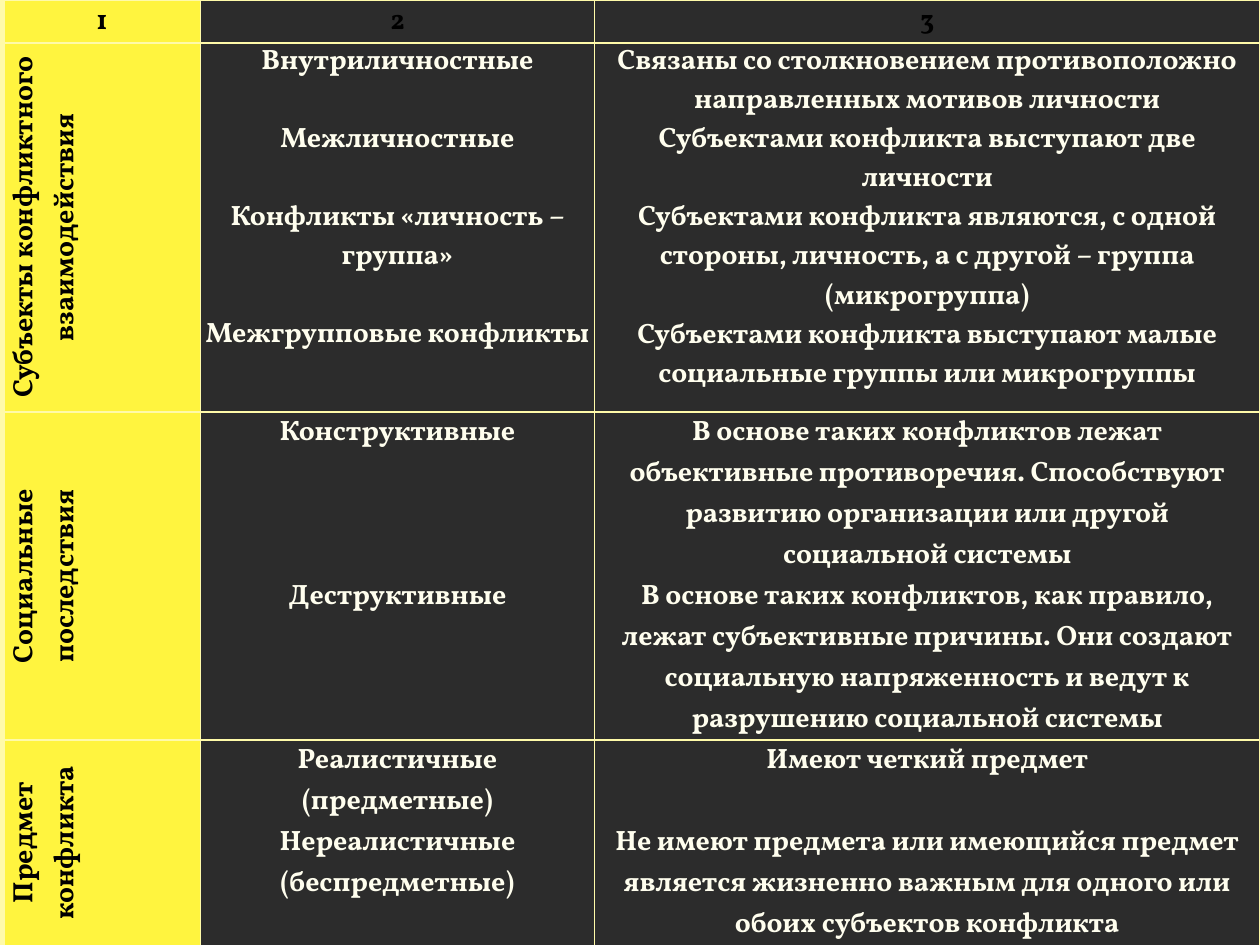
from lxml.etree import SubElement
from pptx import Presentation
from pptx.dml.color import RGBColor
from pptx.enum.text import MSO_ANCHOR as Anchor, PP_ALIGN as Align
from pptx.oxml import parse_xml
from pptx.oxml.ns import nsdecls
from pptx.util import Inches, Pt

FONT = "Vollkorn"
BLACK, CREAM, PALE, YELLOW, DARK = "000000", "FFFEEE", "FFFAA9", "FFF43F", "2C2C2C"
COLUMNS = [1.56, 3.13, 5.28]
HEADINGS = ["1", "2", "3"]
LINE = 22.3
LOOSE_LINE = 23.4

GROUPS = [
    dict(
        height=2.93, inset=0.02, spacing=1.0,
        subject=["Субъекты конфликтного", "взаимодействия"],
        kinds=["Внутриличностные", "Межличностные", "Конфликты «личность – группа»",
               "Межгрупповые конфликты"],
        kind_gap=LINE,
        notes=["Связаны со столкновением противоположно направленных мотивов личности",
               "Субъектами конфликта выступают две личности",
               "Субъектами конфликта являются, с одной стороны, личность, "
               "а с другой – группа (микрогруппа)",
               "Субъектами конфликта выступают малые социальные группы или микрогруппы"],
        note_gap=0),
    dict(
        height=2.59, inset=0.06, spacing=1.05,
        subject=["Социальные", "последствия"],
        kinds=["Конструктивные", "Деструктивные"],
        kind_gap=3 * LOOSE_LINE,
        notes=["В основе таких конфликтов лежат объективные противоречия. "
               "Способствуют развитию организации или другой социальной системы",
               "В основе таких конфликтов, как правило, лежат субъективные причины. "
               "Они создают социальную напряженность и ведут к разрушению социальной системы"],
        note_gap=0),
    dict(
        height=1.59, inset=0.06, spacing=1.05,
        subject=["Предмет", "конфликта"],
        kinds=["Реалистичные (предметные)", "Нереалистичные (беспредметные)"],
        kind_gap=0,
        notes=["Имеют четкий предмет",
               "Не имеют предмета или имеющийся предмет является жизненно важным "
               "для одного или обоих субъектов конфликта"],
        note_gap=LOOSE_LINE),
]


def color(value):
    return RGBColor.from_string(value)


def write(frame, lines, ink=BLACK, spacing=1.05, gap=0):
    for index, line in enumerate(lines):
        para = frame.add_paragraph() if index else frame.paragraphs[0]
        para.alignment = Align.CENTER
        para.line_spacing = spacing
        para.space_before = Pt(gap if index else 0)
        span = para.add_run()
        span.text = line
        span.font.name = FONT
        span.font.size = Pt(16)
        span.font.bold = True
        span.font.color.rgb = color(ink)


def add_borders(cell):
    properties = cell._tc.get_or_add_tcPr()
    for index, side in enumerate(["lnL", "lnR", "lnT", "lnB"]):
        border = parse_xml(f'<a:{side} {nsdecls("a")} w="{Pt(1)}"><a:solidFill>'
                           f'<a:srgbClr val="{PALE}"/></a:solidFill></a:{side}>')
        properties.insert(index, border)


def fill_cell(cell, lines, fill=DARK, inset=0.02, middle=False, upward=False, **style):
    cell.margin_left = cell.margin_right = Inches(inset)
    cell.margin_top = cell.margin_bottom = 0
    cell.vertical_anchor = Anchor.MIDDLE if middle else Anchor.TOP
    cell.fill.solid()
    cell.fill.fore_color.rgb = color(fill)
    add_borders(cell)
    if upward:
        cell._tc.get_or_add_tcPr().set("vert", "vert270")
    write(cell.text_frame, lines, **style)


def add_conflict_table(page, left, top, width, height):
    heights = [0.34] + [group["height"] for group in GROUPS]
    table = page.shapes.add_table(len(heights), len(COLUMNS), left, top, width, height).table
    table.first_row = table.horz_banding = False
    for column, size in zip(table.columns, COLUMNS):
        column.width = Inches(size)
    for row, size in zip(table.rows, heights):
        row.height = Inches(size)
    for index, heading in enumerate(HEADINGS):
        fill_cell(table.cell(0, index), [heading], middle=True,
                  fill=DARK if index else YELLOW)
    for index, group in enumerate(GROUPS, start=1):
        inset, spacing = group["inset"], group["spacing"]
        fill_cell(table.cell(index, 0), group["subject"], fill=YELLOW, inset=inset,
                  middle=True, upward=True)
        fill_cell(table.cell(index, 1), group["kinds"], inset=inset, ink=CREAM,
                  spacing=spacing, gap=group["kind_gap"])
        fill_cell(table.cell(index, 2), group["notes"], inset=inset, ink=CREAM,
                  spacing=spacing, gap=group["note_gap"])


def main():
    deck = Presentation()
    deck.slide_width, deck.slide_height = Inches(10), Inches(7.5)
    page = deck.slides.add_slide(deck.slide_layouts[6])
    page.background.fill.solid()
    page.background.fill.fore_color.rgb = color(PALE)
    add_conflict_table(page, Inches(0.03), Inches(0), Inches(9.97), Inches(7.45))
    deck.save("out.pptx")


if __name__ == "__main__":
    main()
